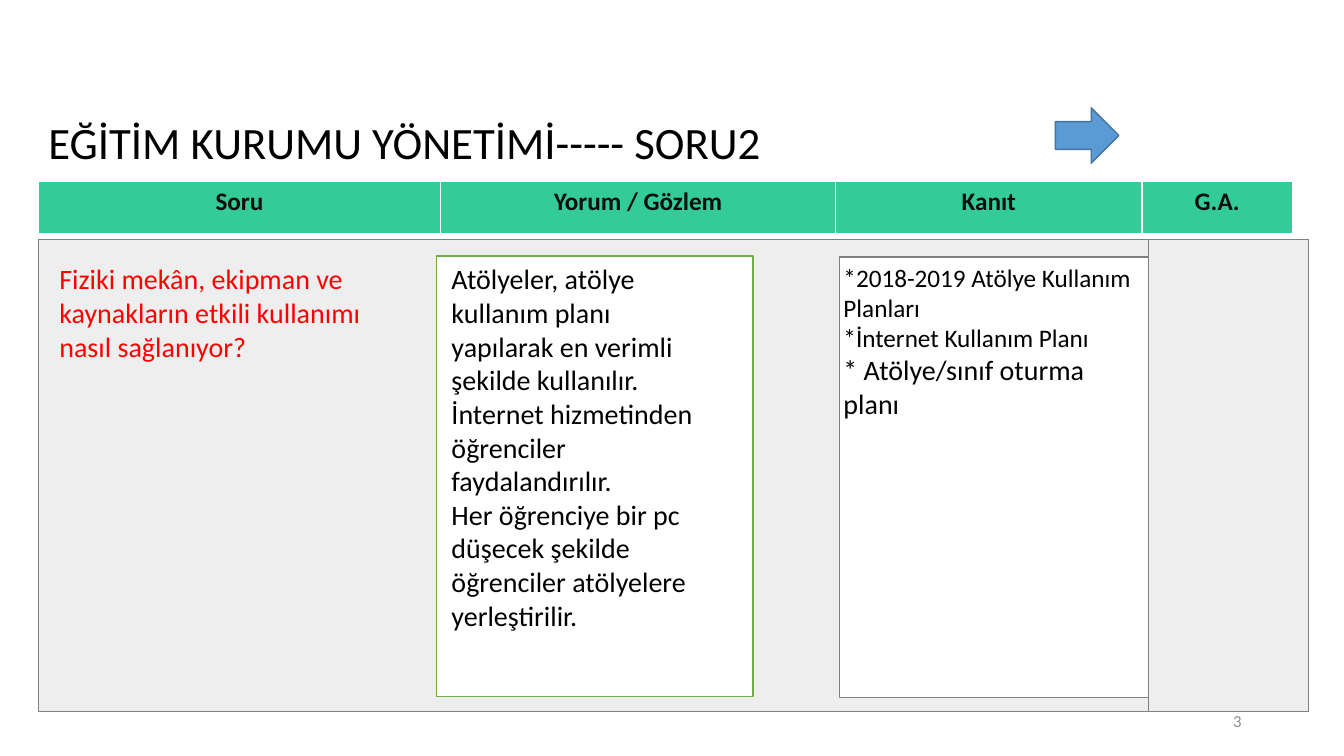
from collections import namedtuple

from lxml.etree import SubElement
from pptx import Presentation
from pptx.dml.color import RGBColor
from pptx.enum.shapes import MSO_SHAPE as Shape
from pptx.enum.text import MSO_ANCHOR as Anchor, PP_ALIGN as Align
from pptx.oxml.ns import qn
from pptx.util import Pt

WHITE = RGBColor(0xFF, 0xFF, 0xFF)
BLACK = RGBColor(0, 0, 0)
INK = RGBColor(0x0D, 0x0D, 0x0D)
RED = RGBColor(0xFF, 0, 0)
TEAL = RGBColor(0x33, 0xCC, 0x99)
GREEN = RGBColor(0x70, 0xAD, 0x47)
PALE = RGBColor(0xEE, 0xEE, 0xEE)
GRAY = RGBColor(0x80, 0x80, 0x80)
NUMBER_GRAY = RGBColor(0x8C, 0x8C, 0x8C)
BLUE = RGBColor(0x5B, 0x9B, 0xD5)
DARK_BLUE = RGBColor(0x43, 0x73, 0x9E)

FONT = "Calibri"
COLUMNS = [("Soru", 287.3), ("Yorum / Gözlem", 282.2), ("Kanıt", 218.9), ("G.A.", 107.3)]
QUESTION = [("Fiziki mekân, ekipman ve kaynakların etkili kullanımı nasıl sağlanıyor?", 20)]
COMMENTS = [
    ("Atölyeler, atölye kullanım planı yapılarak en verimli şekilde kullanılır. "
     "İnternet hizmetinden öğrenciler faydalandırılır.", 20),
    ("Her öğrenciye bir pc düşecek şekilde öğrenciler atölyelere yerleştirilir.", 20),
]
EVIDENCE = [
    ("*2018-2019 Atölye Kullanım Planları", 18),
    ("*İnternet Kullanım Planı", 18),
    ("* Atölye/sınıf oturma planı", 20),
]

Area = namedtuple("Area", "left top width height")


def inside(area, left, top, width, height):
    """Return an area offset from the corner of another."""
    return Area(area.left + left, area.top + top, width, height)


def style_font(para, size, color, bold=False):
    font = para.font
    font.name, font.size, font.bold = FONT, Pt(size), bold
    font.color.rgb = color


def add_block(page, area, fill, line=None, weight=0.75, kind=Shape.RECTANGLE):
    block = page.shapes.add_shape(kind, *map(Pt, area))
    block.shadow.inherit = False
    block.fill.solid()
    block.fill.fore_color.rgb = fill
    if line is None:
        block.line.fill.background()
    else:
        block.line.color.rgb = line
        block.line.width = Pt(weight)
    return block


def add_text(page, area, lines, color=BLACK, anchor=Anchor.TOP, align=Align.LEFT):
    """Add a wrapped text box from (text, size) pairs."""
    box = page.shapes.add_textbox(*map(Pt, area))
    frame = box.text_frame
    frame.word_wrap = True
    frame.vertical_anchor = anchor
    for index, (text, size) in enumerate(lines):
        para = frame.paragraphs[0] if index == 0 else frame.add_paragraph()
        para.text = text
        para.alignment = align
        style_font(para, size, color)
    return box


def add_cell_borders(cell):
    properties = cell._tc.get_or_add_tcPr()
    for position, (side, weight) in enumerate([("L", 1), ("R", 1), ("T", 1), ("B", 3)]):
        border = SubElement(properties, qn(f"a:ln{side}"), w=str(Pt(weight)))
        fill = SubElement(border, qn("a:solidFill"))
        SubElement(fill, qn("a:srgbClr"), val=str(WHITE))
        properties.insert(position, border)


def add_heading(page, area):
    title = Area(area.left, area.top + 5.8, 715, 41)
    box = add_text(page, title, [("EĞİTİM KURUMU YÖNETİMİ----- SORU2", 32)],
                   anchor=Anchor.MIDDLE)
    box.text_frame.paragraphs[0].line_spacing = 0.9
    add_block(page, inside(area, 726.5, 0, 45.4, 39.6), BLUE, DARK_BLUE, 1, Shape.RIGHT_ARROW)


def add_column_header(page, area):
    table = page.shapes.add_table(1, len(COLUMNS), *map(Pt, area)).table
    table.rows[0].height = Pt(area.height)
    for column, cell, (label, width) in zip(table.columns, table.rows[0].cells, COLUMNS):
        column.width = Pt(width)
        cell.fill.solid()
        cell.fill.fore_color.rgb = TEAL
        add_cell_borders(cell)
        para = cell.text_frame.paragraphs[0]
        para.text = label
        para.alignment = Align.CENTER
        style_font(para, 18, INK, bold=True)


def add_answer_panel(page, area):
    add_block(page, area, PALE, GRAY)
    add_block(page, inside(area, 284.4, 11.5, 226, 314.6), WHITE, GREEN, 1)
    add_text(page, inside(area, 7.9, 12.2, 262, 80), QUESTION, RED)
    add_text(page, inside(area, 288, 12.2, 203, 273.6), COMMENTS)
    add_block(page, inside(area, 572.2, 12.2, 221, 314.6), WHITE, GRAY)
    add_text(page, inside(area, 568, 12.2, 229, 121), EVIDENCE)
    grade_width = 114
    add_block(page, inside(area, area.width - grade_width, 0, grade_width, area.height),
              PALE, GRAY)


def main():
    deck = Presentation()
    deck.slide_width, deck.slide_height = Pt(960), Pt(540)
    page = deck.slides.add_slide(deck.slide_layouts[6])
    add_heading(page, Area(27.4, 77, 907.2, 47))
    add_column_header(page, Area(27.4, 129.6, sum(width for _, width in COLUMNS), 38))
    add_answer_panel(page, Area(27.4, 171.4, 907.2, 337))
    add_text(page, Area(678, 500.5, 216, 28.8), [("3", 12)], NUMBER_GRAY,
             Anchor.MIDDLE, Align.RIGHT)
    deck.save("out.pptx")


if __name__ == "__main__":
    main()
